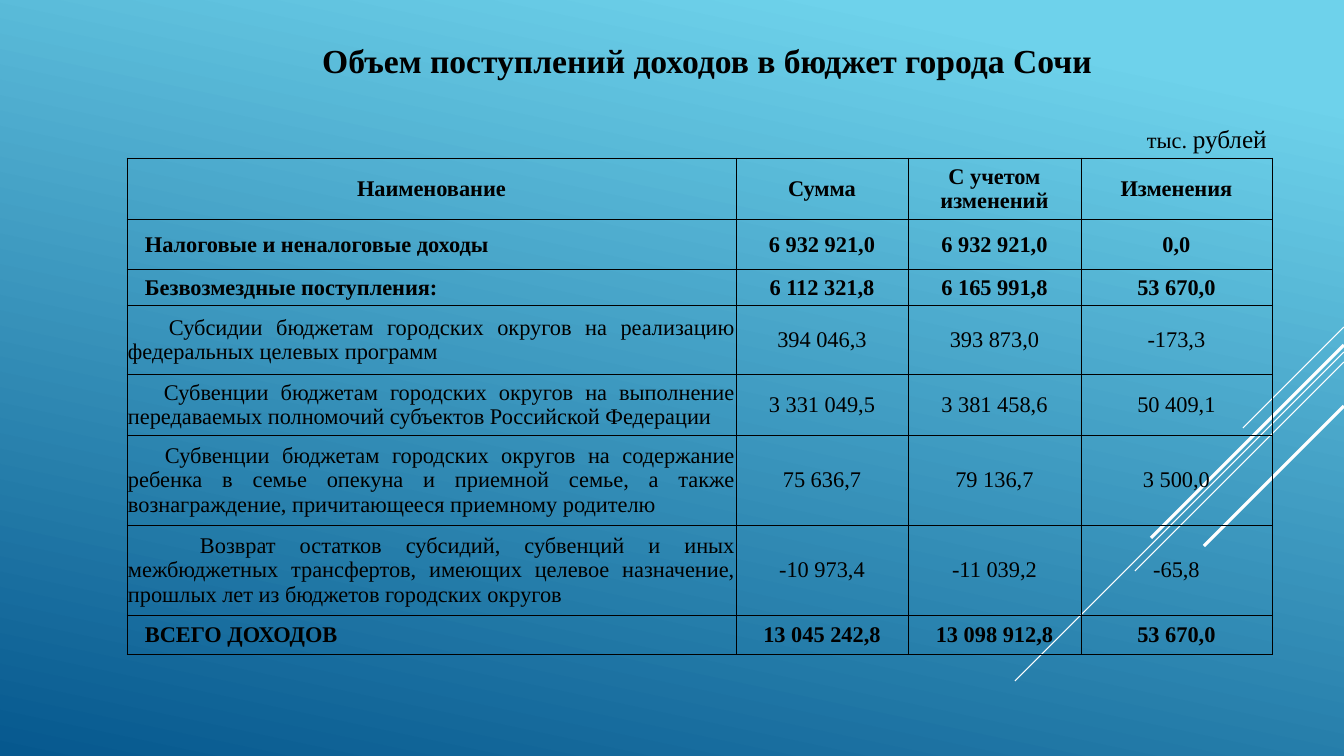
from dataclasses import dataclass

from lxml import etree
from pptx import Presentation
from pptx.dml.color import RGBColor
from pptx.enum.shapes import MSO_CONNECTOR
from pptx.enum.text import MSO_ANCHOR, MSO_AUTO_SIZE, PP_ALIGN as Align
from pptx.oxml import parse_xml
from pptx.oxml.ns import qn
from pptx.util import Emu, Pt

EMU_PER_PX = 914400 / 100.8
WIDTH, HEIGHT = 1344, 756
DRAWING_NS = "http://schemas.openxmlformats.org/drawingml/2006/main"


@dataclass(frozen=True)
class Theme:
    font: str = "Times New Roman"
    text: str = "000000"
    ray: str = "FFFFFF"
    sky: str = "6ED2EB"
    deep: str = "06588E"
    title_size: int = 24
    unit_size: int = 18
    body_size: int = 16
    thin: float = 0.75
    thick: float = 2.25
    border: float = 0.5


def px(length):
    return Emu(round(length * EMU_PER_PX))


class SlideBuilder:
    def __init__(self, slide, theme):
        self.slide = slide
        self.theme = theme

    def background(self, angle):
        fill = self.slide.background.fill
        fill.gradient()
        fill.gradient_angle = 360 - angle
        colors = (self.theme.sky, self.theme.deep)
        for stop, color, position in zip(fill.gradient_stops, colors, (0.1, 1)):
            stop.color.rgb = RGBColor.from_string(color)
            stop.position = position

    def ray(self, top, run, weight):
        """Draw a 45-degree line from the right edge down to the left."""
        connector = self.slide.shapes.add_connector(
            MSO_CONNECTOR.STRAIGHT, px(WIDTH), px(top), px(WIDTH - run), px(top + run))
        connector.line.color.rgb = RGBColor.from_string(self.theme.ray)
        connector.line.width = Pt(weight)
        etree.SubElement(connector._element.spPr, qn("a:effectLst"))

    def format_run(self, run, size, bold=False):
        run.font.name = self.theme.font
        run.font.size = Pt(size)
        run.font.bold = bold
        run.font.color.rgb = RGBColor.from_string(self.theme.text)

    def text(self, box, pieces, align=Align.LEFT, bold=False):
        """Add a one-line text box from (text, size) pieces."""
        frame = self.slide.shapes.add_textbox(*map(px, box)).text_frame
        frame.word_wrap = True
        frame.auto_size = MSO_AUTO_SIZE.SHAPE_TO_FIT_TEXT
        paragraph = frame.paragraphs[0]
        paragraph.alignment = align
        for piece, size in pieces:
            run = paragraph.add_run()
            run.text = piece
            self.format_run(run, size, bold)

    def cell(self, cell, text, bold, align=Align.CENTER, indent=0):
        cell.text_frame.text = text
        cell.vertical_anchor = MSO_ANCHOR.MIDDLE
        cell.margin_left = cell.margin_right = cell.margin_top = px(1)
        cell.margin_bottom = 0
        paragraph = cell.text_frame.paragraphs[0]
        paragraph.alignment = align
        if indent:
            properties = paragraph._p.get_or_add_pPr()
            properties.set("marL", "0")
            properties.set("indent", str(px(indent)))
        self.format_run(paragraph.runs[0], self.theme.body_size, bold)
        for side in "LRTB":
            cell._tc.get_or_add_tcPr().append(parse_xml(
                f'<a:ln{side} xmlns:a="{DRAWING_NS}" w="{Pt(self.theme.border)}">'
                f'<a:solidFill><a:srgbClr val="{self.theme.text}"/></a:solidFill>'
                f'</a:ln{side}>'))
        cell.fill.background()

    def table(self, left, top, widths, header, rows):
        """Add a table; each row is (height, bold, first-line indent, texts)."""
        table = self.slide.shapes.add_table(
            len(rows) + 1, len(widths), px(left), px(top), px(sum(widths)),
            px(header[0] + sum(row[0] for row in rows))).table
        table.first_row = table.horz_banding = False
        for column, width in zip(table.columns, widths):
            column.width = px(width)
        for index, (height, bold, indent, texts) in enumerate([header, *rows]):
            table.rows[index].height = px(height)
            for column, text in enumerate(texts):
                if index and column == 0:
                    self.cell(table.cell(index, column), text, bold, Align.JUSTIFY, indent)
                else:
                    self.cell(table.cell(index, column), text, bold)


HEADER = (61, True, 0, ("Наименование", "Сумма", "С учетом изменений", "Изменения"))
INCOME = [
    (50, True, 17, ("Налоговые и неналоговые доходы",
                    "6 932 921,0", "6 932 921,0", "0,0")),
    (36, True, 17, ("Безвозмездные поступления:",
                    "6 112 321,8", "6 165 991,8", "53 670,0")),
    (69, False, 41, ("Субсидии бюджетам городских округов на реализацию "
                     "федеральных целевых программ",
                     "394 046,3", "393 873,0", "-173,3")),
    (61, False, 36, ("Субвенции бюджетам городских округов на выполнение "
                     "передаваемых полномочий субъектов Российской Федерации",
                     "3 331 049,5", "3 381 458,6", "50 409,1")),
    (90, False, 37, ("Субвенции бюджетам городских округов на содержание ребенка в семье "
                     "опекуна и приемной семье, а также вознаграждение, причитающееся "
                     "приемному родителю",
                     "75 636,7", "79 136,7", "3 500,0")),
    (90, False, 72, ("Возврат остатков субсидий, субвенций и иных межбюджетных трансфертов, "
                     "имеющих целевое назначение, прошлых лет из бюджетов городских округов",
                     "-10 973,4", "-11 039,2", "-65,8")),
    (40, True, 17, ("ВСЕГО ДОХОДОВ",
                    "13 045 242,8", "13 098 912,8", "53 670,0")),
]


def main():
    presentation = Presentation()
    presentation.slide_width, presentation.slide_height = px(WIDTH), px(HEIGHT)
    theme = Theme()
    slide = presentation.slides.add_slide(presentation.slide_layouts[6])
    builder = SlideBuilder(slide, theme)

    builder.background(angle=102)
    for top, run in ((327, 101), (352, 329), (362, 209)):
        builder.ray(top, run, theme.thin)
    for top, run in ((345, 193), (406, 140)):
        builder.ray(top, run, theme.thick)

    builder.text((1137, 118, 152, 40),
                 [("тыс. ", theme.body_size), ("рублей", theme.unit_size)])
    builder.table(127, 158, (609, 172, 173, 191), HEADER, INCOME)
    builder.text((142, 35, 1130, 50),
                 [("Объем поступлений доходов в бюджет города Сочи", theme.title_size)],
                 Align.CENTER, bold=True)
    presentation.save("out.pptx")


if __name__ == "__main__":
    main()
